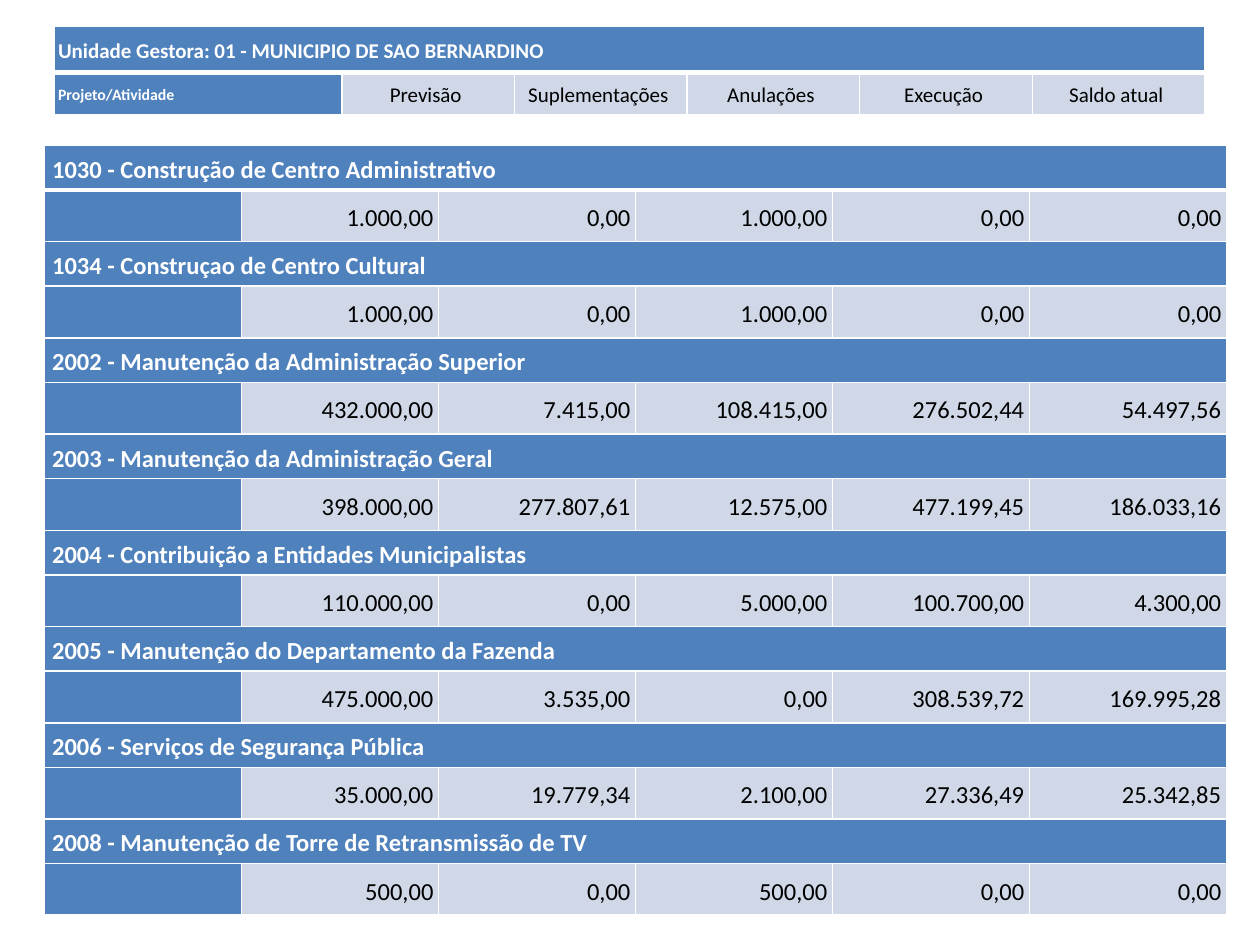
from lxml.etree import SubElement
from pptx import Presentation
from pptx.dml.color import RGBColor
from pptx.enum.text import MSO_ANCHOR as Anchor, PP_ALIGN as Align
from pptx.oxml.ns import qn
from pptx.util import Cm, Pt

BLUE = RGBColor(0x4F, 0x81, 0xBD)
PALE = RGBColor(0xD0, 0xD8, 0xE8)
WHITE = RGBColor(0xFF, 0xFF, 0xFF)
BLACK = RGBColor(0x00, 0x00, 0x00)

COLUMNS = ["Previsão ", "Suplementações ", "Anulações ", "Execução ", "Saldo atual "]
PROJECTS = [
    ("1030 - Construção de Centro Administrativo",
     ["1.000,00", "0,00", "1.000,00", "0,00", "0,00"]),
    ("1034 - Construçao de Centro Cultural",
     ["1.000,00", "0,00", "1.000,00", "0,00", "0,00"]),
    ("2002 - Manutenção da Administração Superior",
     ["432.000,00", "7.415,00", "108.415,00", "276.502,44", "54.497,56"]),
    ("2003 - Manutenção da Administração Geral",
     ["398.000,00", "277.807,61", "12.575,00", "477.199,45", "186.033,16"]),
    ("2004 - Contribuição a Entidades Municipalistas",
     ["110.000,00", "0,00", "5.000,00", "100.700,00", "4.300,00"]),
    ("2005 - Manutenção do Departamento da Fazenda",
     ["475.000,00", "3.535,00", "0,00", "308.539,72", "169.995,28"]),
    ("2006 - Serviços de Segurança Pública",
     ["35.000,00", "19.779,34", "2.100,00", "27.336,49", "25.342,85"]),
    ("2008 - Manutenção de Torre de Retransmissão de TV",
     ["500,00", "0,00", "500,00", "0,00", "0,00"]),
]


class SlideBuilder:
    font = "Calibri"
    line_spacing = 1.15

    def __init__(self, prs):
        self.s = prs.slides.add_slide(prs.slide_layouts[6])

    def table(self, left, top, widths, heights):
        frame = self.s.shapes.add_table(len(heights), len(widths), Cm(left), Cm(top),
                                        Cm(sum(widths)), Cm(sum(heights)))
        tbl = frame.table
        tbl.horz_banding = False
        for column, width in zip(tbl.columns, widths):
            column.width = Cm(width)
        for row, height in zip(tbl.rows, heights):
            row.height = Cm(height)
        for i in range(len(heights)):
            for j in range(len(widths)):
                self.borders(tbl.cell(i, j), i)
        return tbl

    def borders(self, cell, row):
        """White grid, with a thicker rule under the first row."""
        widths = {"L": 1, "R": 1, "T": 3 if row == 1 else 1, "B": 3 if row == 0 else 1}
        tc_pr = cell._tc.get_or_add_tcPr()
        for side, width in widths.items():
            ln = SubElement(tc_pr, qn(f"a:ln{side}"), w=str(Pt(width)))
            fill = SubElement(ln, qn("a:solidFill"))
            SubElement(fill, qn("a:srgbClr"), val=str(WHITE))

    def cell(self, cell, text, size, align=Align.LEFT, head=False, inset=(0.08, 0.02)):
        cell.fill.solid()
        cell.fill.fore_color.rgb = BLUE if head else PALE
        cell.vertical_anchor = Anchor.MIDDLE
        cell.margin_left = cell.margin_right = Cm(inset[0])
        cell.margin_top = cell.margin_bottom = Cm(inset[1])
        if not text:
            return
        p = cell.text_frame.paragraphs[0]
        p.alignment = align
        p.line_spacing = self.line_spacing
        r = p.add_run()
        r.text = text
        r.font.name = self.font
        r.font.size = Pt(size)
        r.font.bold = head
        r.font.color.rgb = WHITE if head else BLACK

    def heading(self, tbl, row, text, size, inset=(0.08, 0.02)):
        """Title cell merged across the whole row."""
        first = tbl.cell(row, 0)
        first.merge(tbl.cell(row, len(tbl.columns) - 1))
        self.cell(first, text, size, head=True, inset=inset)


def main():
    prs = Presentation()
    prs.slide_width, prs.slide_height = Cm(25.4), Cm(19.05)
    b = SlideBuilder(prs)

    projects = b.table(0.9, 2.93, [3.97] * 6, [0.9, 1.04] * len(PROJECTS))
    for i, (name, values) in enumerate(PROJECTS):
        b.heading(projects, 2 * i, name, 14, inset=(0.15, 0.02))
        b.cell(projects.cell(2 * i + 1, 0), "", 14, head=True)
        for j, value in enumerate(values, 1):
            b.cell(projects.cell(2 * i + 1, j), value, 14, Align.RIGHT, inset=(0.1, 0.1))

    header = b.table(1.09, 0.53, [5.8] + [3.48] * 5, [0.93, 0.86])
    b.heading(header, 0, "Unidade Gestora: 01 - MUNICIPIO DE SAO BERNARDINO", 12)
    b.cell(header.cell(1, 0), "Projeto/Atividade", 9, head=True)
    for j, title in enumerate(COLUMNS, 1):
        b.cell(header.cell(1, j), title, 12, Align.CENTER)

    prs.save("out.pptx")


if __name__ == "__main__":
    main()
